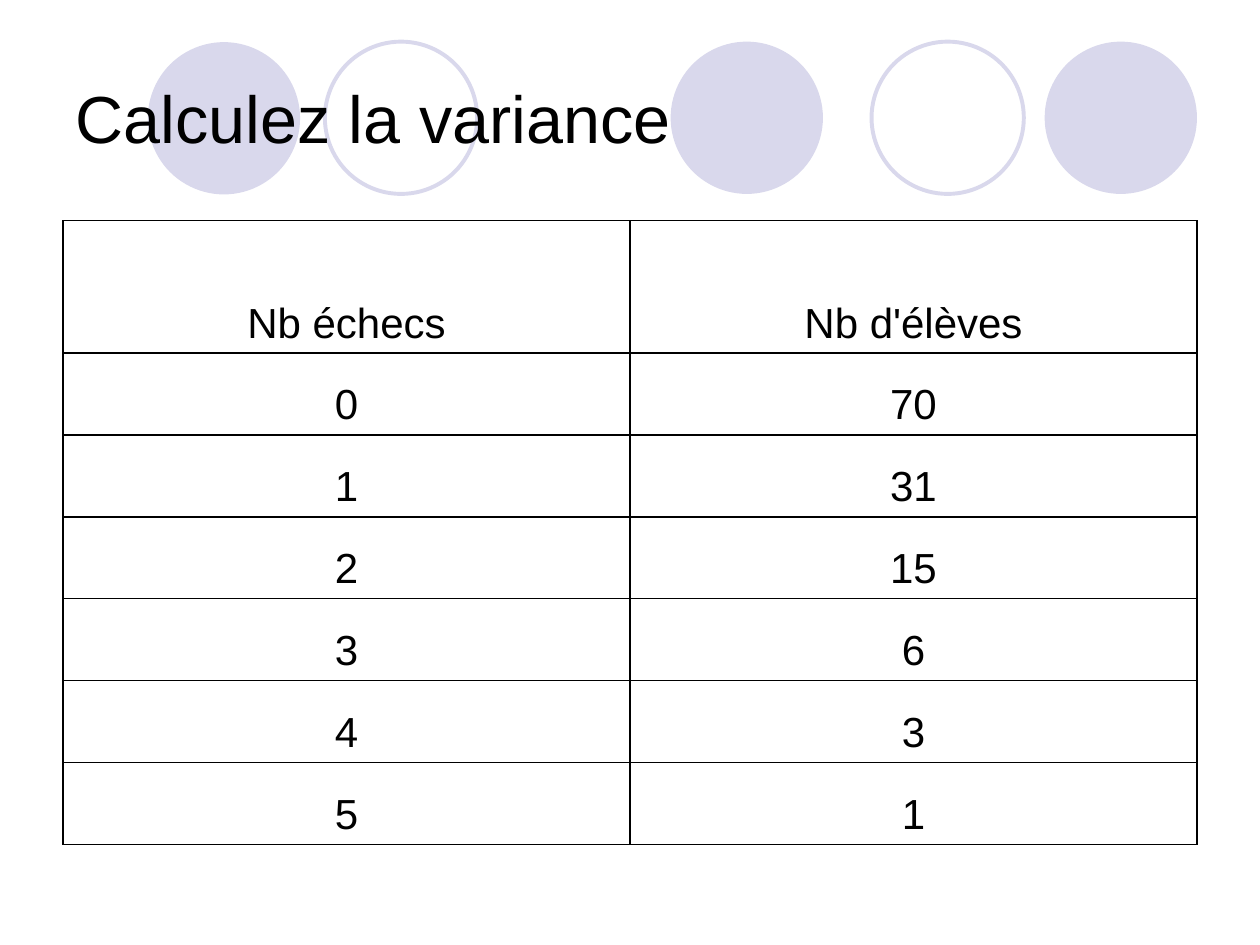
from dataclasses import dataclass

from lxml import etree
from pptx import Presentation
from pptx.dml.color import RGBColor
from pptx.enum.shapes import MSO_SHAPE
from pptx.enum.text import MSO_ANCHOR, PP_ALIGN
from pptx.oxml.ns import qn
from pptx.util import Cm, Pt

OVAL = MSO_SHAPE.OVAL
MIDDLE, BOTTOM = MSO_ANCHOR.MIDDLE, MSO_ANCHOR.BOTTOM
LEFT, CENTER = PP_ALIGN.LEFT, PP_ALIGN.CENTER

FONT = "Arial"
BLACK, LILAC = "000000", "D9D8EC"
MARGIN, WIDTH = 1.27, 22.86
DIAMETER = 3.07
HEADER_HEIGHT, ROW_HEIGHT = 2.67, 1.65
HANGING = 0.97


@dataclass
class Circle:
    """A decorative circle, filled or outlined, placed in centimetres."""
    left: float
    top: float
    filled: bool


CIRCLES = [
    Circle(13.52, 0.84, True),
    Circle(21.06, 0.84, True),
    Circle(2.98, 0.85, True),
    Circle(17.57, 0.84, False),
    Circle(6.55, 0.84, False),
]

ROWS = [
    ("Nb échecs", "Nb d'élèves"),
    ("0", "70"),
    ("1", "31"),
    ("2", "15"),
    ("3", "6"),
    ("4", "3"),
    ("5", "1"),
]


def rgb(value: str) -> RGBColor:
    """Return the colour for a hex string."""
    return RGBColor.from_string(value)


def add_circle(s, circle: Circle) -> None:
    """Draw one decorative circle."""
    sp = s.shapes.add_shape(OVAL, Cm(circle.left), Cm(circle.top), Cm(DIAMETER), Cm(DIAMETER))
    sp.shadow.inherit = False
    if circle.filled:
        sp.fill.solid()
        sp.fill.fore_color.rgb = rgb(LILAC)
        sp.line.fill.background()
    else:
        sp.fill.background()
        sp.line.color.rgb = rgb(LILAC)
        sp.line.width = Pt(2.25)


def write(tf, text: str, size: float, align: PP_ALIGN):
    """Write one run of black text and return its paragraph."""
    p = tf.paragraphs[0]
    p.alignment = align
    r = p.add_run()
    r.text = text
    r.font.name = FONT
    r.font.size = Pt(size)
    r.font.color.rgb = rgb(BLACK)
    return p


def add_title(s, text: str) -> None:
    """Add the slide title."""
    sp = s.shapes.add_textbox(Cm(MARGIN), Cm(0.76), Cm(WIDTH), Cm(3.18))
    tf = sp.text_frame
    tf.word_wrap = True
    tf.vertical_anchor = MIDDLE
    write(tf, text, 38, LEFT)


def set_borders(cell) -> None:
    """Give a cell thin black borders on all sides."""
    props = cell._tc.get_or_add_tcPr()
    for index, side in enumerate(("lnL", "lnR", "lnT", "lnB")):
        line = etree.Element(qn(f"a:{side}"), w=str(Pt(1)))
        fill = etree.SubElement(line, qn("a:solidFill"))
        etree.SubElement(fill, qn("a:srgbClr"), val=BLACK)
        props.insert(index, line)


def fill_cell(cell, text: str) -> None:
    """Write and style one table cell."""
    cell.fill.background()
    cell.vertical_anchor = BOTTOM
    p = write(cell.text_frame, text, 24, CENTER)
    props = p._p.get_or_add_pPr()
    props.set("marL", str(Cm(HANGING)))
    props.set("indent", str(-Cm(HANGING)))
    set_borders(cell)


def add_data_table(s, rows: list[tuple[str, str]]) -> None:
    """Add the table of failures and pupil counts."""
    height = HEADER_HEIGHT + ROW_HEIGHT * (len(rows) - 1)
    frame = s.shapes.add_table(len(rows), 2, Cm(MARGIN), Cm(4.45), Cm(WIDTH), Cm(height))
    table = frame.table
    table.first_row = False
    table.horz_banding = False
    for i, values in enumerate(rows):
        table.rows[i].height = Cm(ROW_HEIGHT if i else HEADER_HEIGHT)
        for j, text in enumerate(values):
            fill_cell(table.cell(i, j), text)


def main() -> None:
    """Build and save the slide."""
    prs = Presentation()
    prs.slide_width, prs.slide_height = Cm(25.4), Cm(19.05)
    s = prs.slides.add_slide(prs.slide_layouts[6])
    for circle in CIRCLES:
        add_circle(s, circle)
    add_title(s, "Calculez la variance")
    add_data_table(s, ROWS)
    prs.save("out.pptx")


if __name__ == "__main__":
    main()
